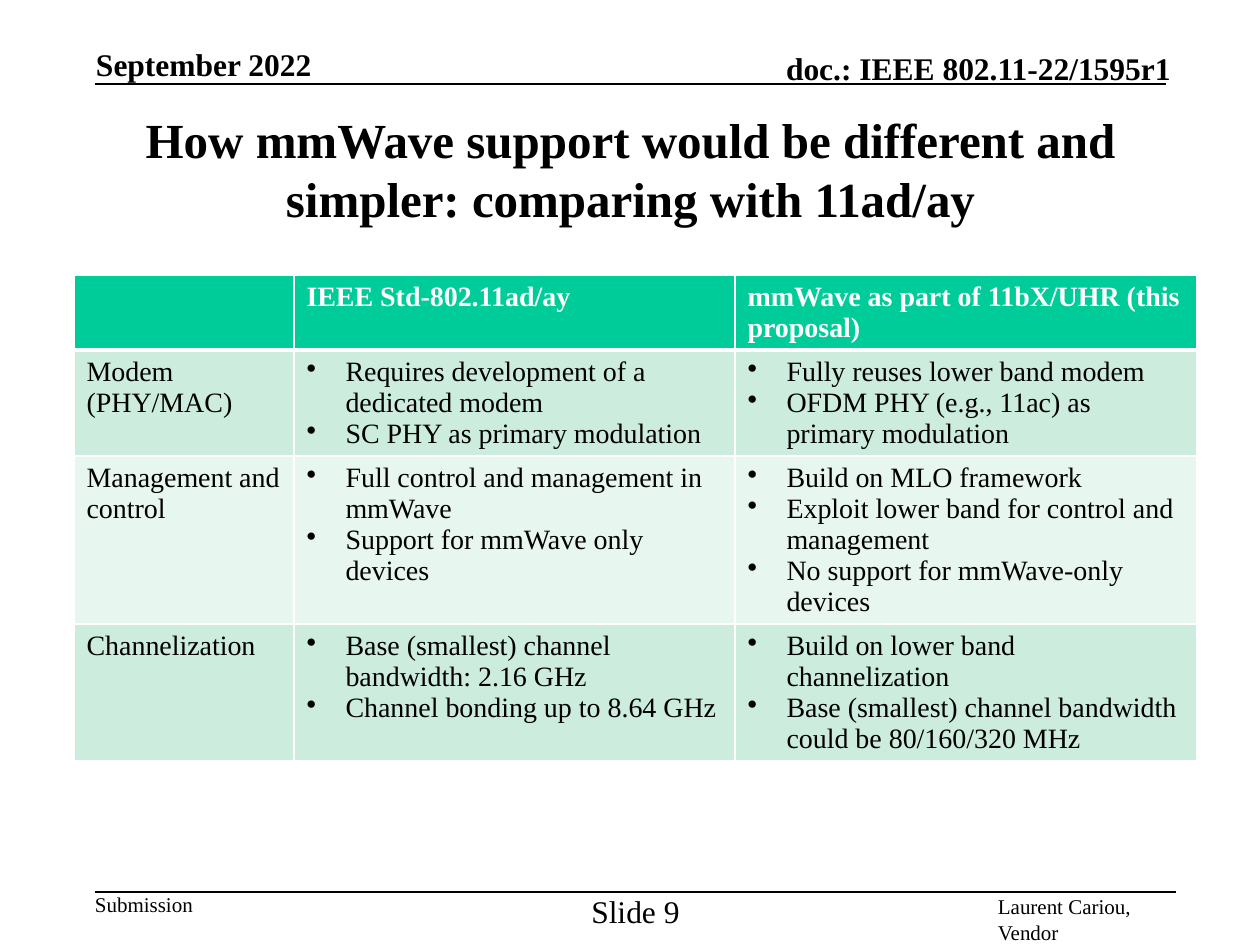
import dataclasses

import lxml.etree
import pptx
import pptx.dml.color
import pptx.enum.shapes
import pptx.enum.text
import pptx.oxml.ns
import pptx.util

SCALE = 914400 / 126
FONT = "Times New Roman"
BLACK, WHITE = "000000", "FFFFFF"
HEAD, DARK, LIGHT = "00CC99", "CCECDE", "E7F6EF"
ALIGN = pptx.enum.text.PP_ALIGN
ANCHOR = pptx.enum.text.MSO_ANCHOR


@dataclasses.dataclass
class Label:
    text: str
    box: tuple[int, int, int, int]
    size: int
    bold: bool = False
    align: ALIGN = ALIGN.LEFT
    anchor: ANCHOR = ANCHOR.TOP
    wrap: bool = True
    pad: tuple[int, int] = (0, 0)


@dataclasses.dataclass
class Row:
    height: int
    fill: str
    cells: list[str | list[str]]


LABELS = [
    Label("September 2022", (96, 45, 258, 38), 18, True, anchor=ANCHOR.BOTTOM),
    Label("doc.: IEEE 802.11-22/1595r1", (689, 49, 482, 38), 18, True,
          ALIGN.RIGHT, ANCHOR.BOTTOM),
    Label("Submission", (95, 892, 99, 25), 12, wrap=False),
    Label("Slide 9", (599, 892, 73, 25), 18, align=ALIGN.CENTER, wrap=False),
    Label("Laurent Cariou, Vendor", (985, 888, 212, 25), 12, pad=(13, 6)),
]
RULES = [(95, 1166, 84), (95, 1176, 892)]
COLUMNS = [220, 441, 462]
ROWS = [
    Row(74, HEAD, ["", "IEEE Std-802.11ad/ay",
                   "mmWave as part of 11bX/UHR (this proposal)"]),
    Row(106, DARK, [
        "Modem (PHY/MAC)",
        ["Requires development of a dedicated modem",
         "SC PHY as primary modulation"],
        ["Fully reuses lower band modem",
         "OFDM PHY (e.g., 11ac) as primary modulation"]]),
    Row(168, LIGHT, [
        "Management and control",
        ["Full control and management in mmWave",
         "Support for mmWave only devices"],
        ["Build on MLO framework",
         "Exploit lower band for control and management",
         "No support for mmWave-only devices"]]),
    Row(136, DARK, [
        "Channelization",
        ["Base (smallest) channel bandwidth: 2.16 GHz",
         "Channel bonding up to 8.64 GHz"],
        ["Build on lower band channelization",
         "Base (smallest) channel bandwidth could be 80/160/320 MHz"]]),
]


def px(count: int) -> int:
    return round(count * SCALE)


def color(code: str) -> pptx.dml.color.RGBColor:
    return pptx.dml.color.RGBColor.from_string(code)


def child(node, tag: str, **attrs: str):
    return lxml.etree.SubElement(node, pptx.oxml.ns.qn(tag), attrs)


def style(frame, size: int, bold: bool, code: str, align: ALIGN) -> None:
    for para in frame.paragraphs:
        para.alignment = align
        for run in para.runs:
            run.font.name = FONT
            run.font.size = pptx.util.Pt(size)
            run.font.bold = bold
            run.font.color.rgb = color(code)


def fill_frame(frame, label: Label) -> None:
    frame.text = label.text
    frame.word_wrap = label.wrap
    frame.auto_size = pptx.enum.text.MSO_AUTO_SIZE.NONE
    frame.vertical_anchor = label.anchor
    frame.margin_left = frame.margin_right = px(label.pad[0])
    frame.margin_top = frame.margin_bottom = px(label.pad[1])
    style(frame, label.size, label.bold, BLACK, label.align)


def draw_title(slide) -> None:
    label = Label(
        "How mmWave support would be different and simpler: "
        "comparing with 11ad/ay",
        (95, 95, 1071, 147), 28, True, ALIGN.CENTER, ANCHOR.MIDDLE, pad=(13, 6))
    title = slide.shapes.title
    title.left, title.top, title.width, title.height = map(px, label.box)
    fill_frame(title.text_frame, label)


def draw_label(slide, label: Label) -> None:
    box = slide.shapes.add_textbox(*map(px, label.box))
    fill_frame(box.text_frame, label)


def draw_rule(slide, left: int, right: int, top: int) -> None:
    rule = slide.shapes.add_connector(
        pptx.enum.shapes.MSO_CONNECTOR.STRAIGHT,
        px(left), px(top), px(right), px(top))
    rule.line.color.rgb = color(BLACK)
    rule.line.width = pptx.util.Pt(1)
    child(rule._element.spPr, "a:effectLst")


def add_edges(cell, base: int) -> None:
    """Give the cell white borders, the lower one base points wide."""
    props = cell._tc.get_or_add_tcPr()
    for side, width in zip("LRTB", (1, 1, 1, base)):
        edge = child(props, f"a:ln{side}", w=str(pptx.util.Pt(width)))
        child(child(edge, "a:solidFill"), "a:srgbClr", val=WHITE)


def add_bullet(para) -> None:
    props = para._p.get_or_add_pPr()
    props.set("marL", str(px(39)))
    props.set("indent", str(px(-39)))
    child(props, "a:buChar", char="•")


def draw_table(slide) -> None:
    table = slide.shapes.add_table(
        len(ROWS), len(COLUMNS), px(74), px(275),
        px(sum(COLUMNS)), px(sum(row.height for row in ROWS))).table
    for column, width in zip(table.columns, COLUMNS):
        column.width = px(width)
    for index, row in enumerate(ROWS):
        table.rows[index].height = px(row.height)
        head = index == 0
        for cell, text in zip(table.rows[index].cells, row.cells):
            add_edges(cell, 3 if head else 1)
            cell.fill.solid()
            cell.fill.fore_color.rgb = color(row.fill)
            frame = cell.text_frame
            if isinstance(text, list):
                frame.text = "\n".join(text)
                for para in frame.paragraphs:
                    add_bullet(para)
            else:
                frame.text = text
            style(frame, 16, head, WHITE if head else BLACK, ALIGN.LEFT)


def main() -> None:
    deck = pptx.Presentation()
    deck.slide_width, deck.slide_height = px(1260), px(945)
    slide = deck.slides.add_slide(deck.slide_layouts[5])
    for rule in RULES:
        draw_rule(slide, *rule)
    draw_title(slide)
    draw_table(slide)
    for label in LABELS:
        draw_label(slide, label)
    deck.save("out.pptx")


if __name__ == "__main__":
    main()
